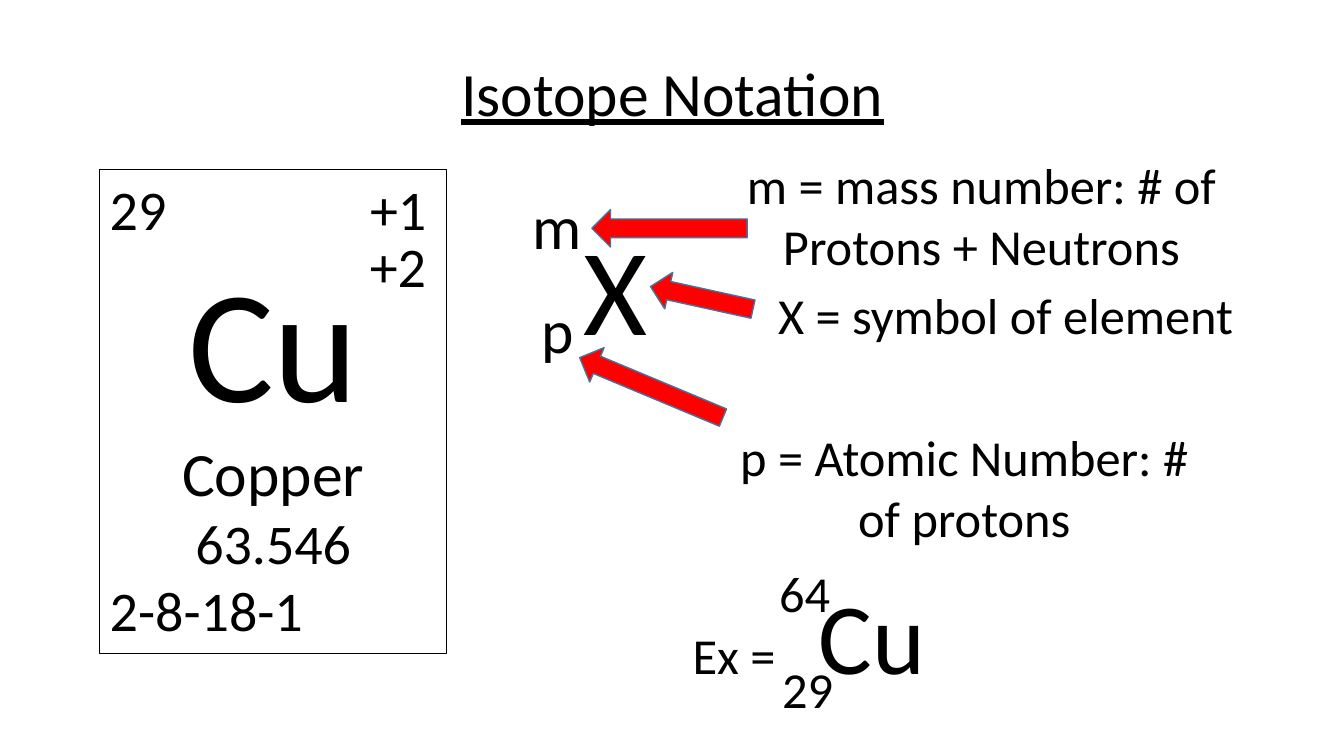
from lxml import etree
from pptx import Presentation
from pptx import util as u
from pptx.dml.color import RGBColor
from pptx.enum import shapes, text
from pptx.oxml import ns

BLACK = RGBColor(0x00, 0x00, 0x00)
WHITE = RGBColor(0xFF, 0xFF, 0xFF)
RED = RGBColor(0xFF, 0x00, 0x00)
ARROW_EDGE = RGBColor(0x43, 0x73, 0x9E)
FONT = "Calibri"
LEFT, CENTER = text.PP_ALIGN.LEFT, text.PP_ALIGN.CENTER


def style(paragraph, size, align=CENTER):
    paragraph.alignment = align
    paragraph.font.name = FONT
    paragraph.font.size = u.Pt(size)
    paragraph.font.color.rgb = BLACK


def add_tab(paragraph, position, align):
    """Put a tab stop at a distance in inches from the text's left edge."""
    properties = paragraph._p.get_or_add_pPr()
    stops = etree.Element(ns.qn("a:tabLst"))
    etree.SubElement(stops, ns.qn("a:tab"), pos=str(u.Inches(position)), algn=align)
    properties.insert(0, stops)


def add_label(slide, box, words, size, align=CENTER):
    label = slide.shapes.add_textbox(*map(u.Inches, box))
    label.text_frame.word_wrap = True
    paragraph = label.text_frame.paragraphs[0]
    paragraph.text = words
    style(paragraph, size, align)
    return label.text_frame


def add_preset(slide, kind, box, fill, edge, edge_width):
    preset = slide.shapes.add_shape(kind, *map(u.Inches, box))
    preset.shadow.inherit = False
    preset.fill.solid()
    preset.fill.fore_color.rgb = fill
    preset.line.color.rgb = edge
    preset.line.width = u.Pt(edge_width)
    return preset


def add_title(slide, box):
    title = add_label(slide, box, "Isotope Notation", 44)
    title.vertical_anchor = text.MSO_ANCHOR.MIDDLE
    title.paragraphs[0].line_spacing = 0.9
    title.paragraphs[0].font.underline = True


def add_notation(slide, left, top):
    # Symbol with its mass and atomic numbers
    add_label(slide, (left + 0.57, top + 0.24, 1.14, 1.58), "X", 88)
    add_label(slide, (left, top, 1.14, 0.84), "m", 44)
    add_label(slide, (left, top + 1.03, 1.14, 0.84), "p", 44)

    # Arrows from the definitions to the symbol
    for dx, dy, length, angle in ((0.91, 0.26, 1.54, 180),
                                  (0.73, 1.84, 1.54, 202.7),
                                  (1.48, 0.95, 1.04, 192.4)):
        arrow = add_preset(slide, shapes.MSO_SHAPE.RIGHT_ARROW,
                           (left + dx, top + dy, length, 0.37), RED, ARROW_EDGE, 1)
        arrow.rotation = angle


def add_definitions(slide, left, top):
    for dx, dy, height, words in (
            (0.17, 0, 1.31, "m = mass number: # of Protons + Neutrons"),
            (0, 2.7, 1.31, "p = Atomic Number: # of protons"),
            (0.41, 1.29, 0.71, "X = symbol of element")):
        add_label(slide, (left + dx, top + dy, 5.07, height), words, 36)


def add_element_card(slide, left, top, width, height):
    card = add_preset(slide, shapes.MSO_SHAPE.RECTANGLE,
                      (left, top, width, height), WHITE, BLACK, 0.75)
    frame = card.text_frame
    frame.word_wrap = True
    frame.vertical_anchor = text.MSO_ANCHOR.TOP
    lines = (("29\t+1", 40, LEFT), ("Cu", 115, CENTER), ("Copper", 44, CENTER),
             ("63.546", 40, CENTER), ("2-8-18-1", 40, LEFT))
    frame.text = "\n".join(words for words, _, _ in lines)
    for paragraph, (_, size, align) in zip(frame.paragraphs, lines):
        style(paragraph, size, align)
    add_tab(frame.paragraphs[0], width - 0.3, "r")

    # Second charge, under the first
    add_label(slide, (left + width - 0.86, top + 0.57, 0.95, 0.77), "+2", 40, LEFT)


def add_example(slide, left, top):
    example = add_label(slide, (left, top + 0.11, 5.07, 1.31), "Ex =\t", 36, LEFT)
    example.margin_left = u.Inches(1.34)
    equation = example.paragraphs[0]
    add_tab(equation, 1.25, "l")
    symbol = equation.add_run()
    symbol.text = "Cu"
    symbol.font.size = u.Pt(72)
    add_label(slide, (left + 1.88, top, 1.14, 0.71), "64", 36)
    add_label(slide, (left + 1.91, top + 0.95, 1.14, 0.71), "29", 36)


def main():
    deck = Presentation()
    deck.slide_width, deck.slide_height = u.Inches(13.33), u.Inches(7.5)
    slide = deck.slides.add_slide(deck.slide_layouts[6])
    add_title(slide, (0.92, 0.23, 11.5, 1.45))
    add_notation(slide, 4.96, 1.82)
    add_definitions(slide, 7.03, 1.48)
    add_element_card(slide, 0.99, 1.68, 3.44, 4.8)
    add_example(slide, 5.53, 5.53)
    deck.save("out.pptx")


if __name__ == "__main__":
    main()
